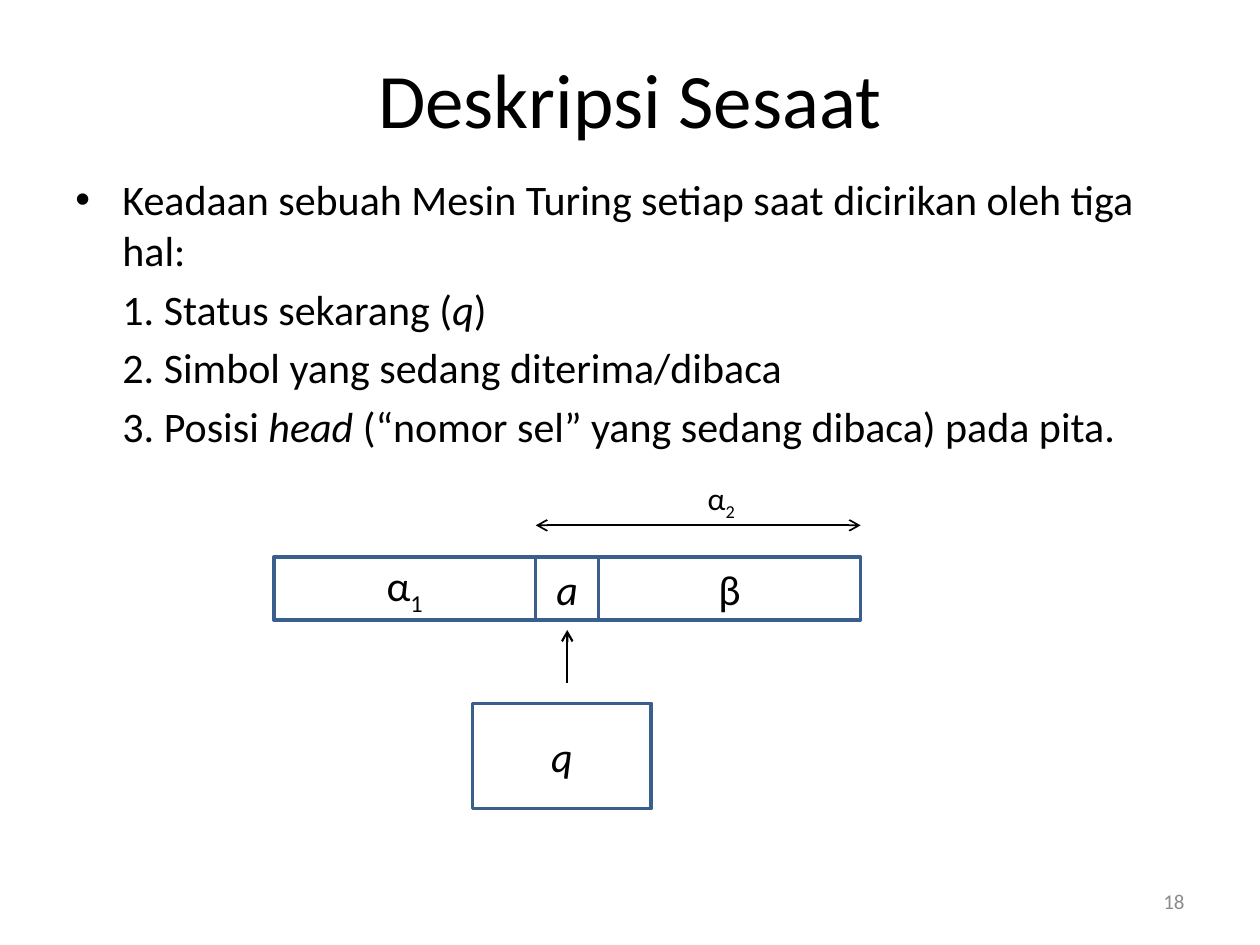
"""Build the slide on the instantaneous description of a Turing machine."""
from itertools import accumulate

from lxml.etree import SubElement as Sub
from pptx import Presentation
from pptx.dml.color import RGBColor
from pptx.enum.shapes import MSO_CONNECTOR as Link, MSO_SHAPE as Form
from pptx.enum.text import MSO_ANCHOR as Anchor, MSO_AUTO_SIZE as Auto, PP_ALIGN as Align
from pptx.oxml.ns import qn
from pptx.util import Cm, Pt

BLACK = RGBColor(0, 0, 0)
BLUE = RGBColor(0x3A, 0x5F, 0x8C)
GRAY = RGBColor(0x8C, 0x8C, 0x8C)
FONT = "Calibri"

TITLE = [[("Deskripsi Sesaat", "")]]
BODY = [
    [("Keadaan sebuah Mesin Turing setiap saat dicirikan oleh tiga hal:", "")],
    [("1. Status sekarang (", ""), ("q", "i"), (")", "")],
    [("2. Simbol yang sedang diterima/dibaca", "")],
    [("3. Posisi ", ""), ("head", "i"),
     (" (“nomor sel” yang sedang dibaca) pada pita.", "")],
]
CELLS = [
    (5.28, [[("α", ""), ("1", "sub")]]),
    (1.27, [[("a", "i")]]),
    (5.28, [[("β", "")]]),
]
SPAN = [[("α", ""), ("2", "sub")]]
STATE = [[("q", "i")]]
PAGE = [[("18", "")]]

LEFT, TOP, HIGH = 5.52, 11.23, 1.27
INDENT = 0.95

deck = Presentation()
deck.slide_width, deck.slide_height = Cm(25.4), Cm(19.05)
slide = deck.slides.add_slide(deck.slide_layouts[6])
shapes = slide.shapes


def write(shape, text, size=24, color=BLACK, align=Align.CENTER,
          anchor=Anchor.MIDDLE, wrap=True, gap=0):
    frame = shape.text_frame
    frame.word_wrap, frame.vertical_anchor = wrap, anchor
    for n, runs in enumerate(text):
        para = frame.add_paragraph() if n else frame.paragraphs[0]
        para.alignment, para.space_before = align, Pt(gap)
        for part, style in runs:
            run = para.add_run()
            run.text = part
            font = run.font
            font.name, font.size, font.italic = FONT, Pt(size), style == "i"
            font.color.rgb = color
            if style == "sub":
                run._r.get_or_add_rPr().set("baseline", "-25000")
    return frame


def label(spot, text, **form):
    return write(shapes.add_textbox(*map(Cm, spot)), text, **form)


def box(spot, text):
    rect = shapes.add_shape(Form.RECTANGLE, *map(Cm, spot))
    rect.shadow.inherit = False
    rect.fill.background()
    rect.line.color.rgb, rect.line.width = BLUE, Pt(2)
    write(rect, text)


def arrow(ends, width, tips):
    link = shapes.add_connector(Link.STRAIGHT, *map(Cm, ends))
    link.line.color.rgb, link.line.width = BLACK, Pt(width)
    line = link.line._get_or_add_ln()
    for tip in tips:
        Sub(line, qn(f"a:{tip}"), type="arrow")
    Sub(link._element.spPr, qn("a:effectLst"))


label((1.27, 0.76, 22.86, 2.41), TITLE, size=44)
body = label((1.27, 3.38, 22.86, 13.64), BODY, align=Align.LEFT,
             anchor=Anchor.TOP, gap=4.8)
for n, para in enumerate(body.paragraphs):
    props = para._p.get_or_add_pPr()
    props.set("marL", str(Cm(INDENT)))
    props.set("indent", str(0 if n else -Cm(INDENT)))
    if n == 0:
        Sub(props, qn("a:buFont"), typeface="Arial")
        Sub(props, qn("a:buChar"), char="•")

edges = list(accumulate((wide for wide, _ in CELLS), initial=LEFT))
for left, (wide, text) in zip(edges, CELLS):
    box((left, TOP, wide, HIGH), text)

arrow((edges[1], 10.59, edges[3], 10.59), 1, ["headEnd", "tailEnd"])
span = label((13.97, 9.53, 1.14, 1.02), SPAN, size=18, wrap=False,
             anchor=Anchor.TOP)
span.auto_size = Auto.SHAPE_TO_FIT_TEXT

mid = (edges[1] + edges[2]) / 2
box((9.53, 14.18, 3.6, 2.12), STATE)
arrow((mid, 13.76, mid, 12.7), 1.25, ["tailEnd"])
label((18.2, 17.65, 5.93, 1.02), PAGE, size=12, color=GRAY, align=Align.RIGHT)

deck.save("out.pptx")
